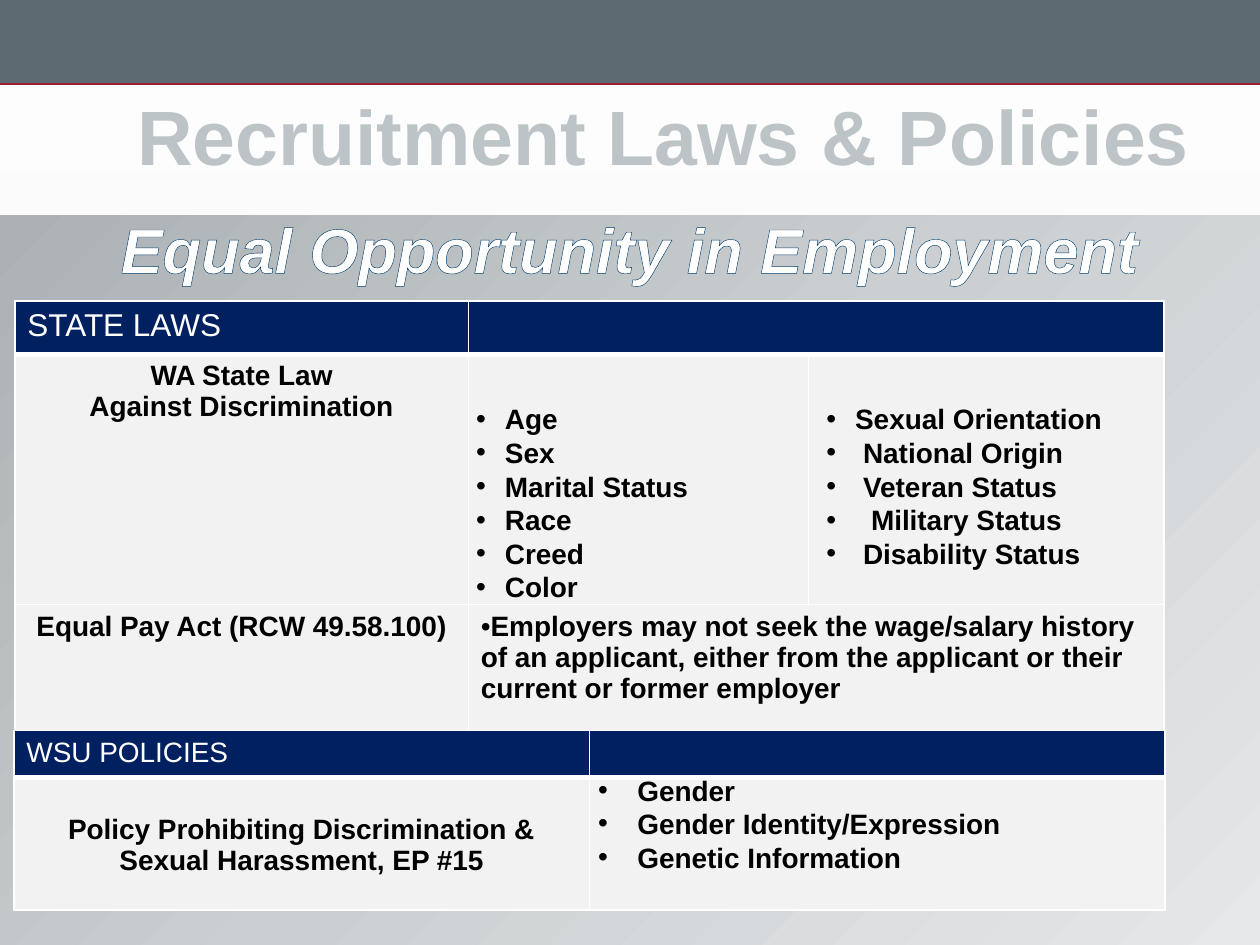
import pptx
import pptx.util
import pptx.dml.color
import pptx.enum.shapes
import pptx.enum.text
import pptx.oxml
import pptx.oxml.ns
from lxml import etree

Cm, Pt = pptx.util.Cm, pptx.util.Pt
qn = pptx.oxml.ns.qn
ALIGN = pptx.enum.text.PP_ALIGN
ANCHOR = pptx.enum.text.MSO_ANCHOR
NAVY, PALE, WHITE, BLACK = "002060", "F2F2F2", "FFFFFF", "000000"


def color(code):
    return pptx.dml.color.RGBColor.from_string(code)


def blend(fill, stops, angle):
    """Give a fill evenly spaced gradient stops; angle is anticlockwise."""
    fill.gradient()
    fill.gradient_angle = angle
    items = fill._fill._gradFill.find(qn("a:gsLst"))
    for old in list(items):
        items.remove(old)
    for i, code in enumerate(stops):
        stop = etree.SubElement(items, qn("a:gs"), pos=str(i * 100000 // (len(stops) - 1)))
        etree.SubElement(stop, qn("a:srgbClr"), val=code)


def stroke(tag, code, width):
    """Make a solid line element for text outlines and cell borders."""
    line = etree.Element(qn(tag), w=str(Pt(width)))
    solid = etree.SubElement(line, qn("a:solidFill"))
    etree.SubElement(solid, qn("a:srgbClr"), val=code)
    return line


def bullet(para, indent):
    """Hang a bullet at the left edge, with its text at the indent."""
    props = para._p.get_or_add_pPr()
    props.set("marL", str(Cm(indent)))
    props.set("indent", str(-Cm(indent)))
    etree.SubElement(props, qn("a:buFont"), typeface="Arial")
    etree.SubElement(props, qn("a:buChar"), char="•")


class Deck:
    face = "Arial"

    def __init__(self, wide, high):
        self.file = pptx.Presentation()
        self.file.slide_width, self.file.slide_height = Cm(wide), Cm(high)
        self.slide = self.file.slides.add_slide(self.file.slide_layouts[6])
        self.shapes = self.slide.shapes

    def style(self, para, size, code, bold=True, slant=False):
        font = para.font
        font.name, font.size = self.face, Pt(size)
        font.bold, font.italic = bold, slant
        font.color.rgb = color(code)

    def rect(self, *box):
        shape = self.shapes.add_shape(
            pptx.enum.shapes.MSO_SHAPE.RECTANGLE, *map(Cm, box))
        shape.shadow.inherit = False
        shape.line.fill.background()
        return shape

    def rule(self, x1, y1, x2, y2, code, width):
        line = self.shapes.add_connector(
            pptx.enum.shapes.MSO_CONNECTOR.STRAIGHT, *map(Cm, (x1, y1, x2, y2)))
        line.line.color.rgb, line.line.width = color(code), Pt(width)
        etree.SubElement(line._element.spPr, qn("a:effectLst"))

    def frame(self, box):
        frame = self.shapes.add_textbox(*map(Cm, box)).text_frame
        frame.word_wrap = True
        return frame

    def head(self, text, box, size, code, edge, width, slant=False):
        frame = self.frame(box)
        frame.vertical_anchor = ANCHOR.BOTTOM
        para = frame.paragraphs[0]
        para.alignment = ALIGN.CENTER
        self.style(para, size, code, slant=slant)
        run = para.add_run()
        run.text = text
        run._r.get_or_add_rPr().insert(0, stroke("a:ln", edge, width))

    def points(self, items, box, indent):
        """List bulleted items, each a text and its extra indent."""
        frame = self.frame(box)
        for i, (text, extra) in enumerate(items):
            para = frame.add_paragraph() if i else frame.paragraphs[0]
            bullet(para, indent + extra)
            para.text = text
            para.line_spacing = Pt(19.2)
            self.style(para, 16, BLACK)

    def table(self, left, top, cols, rows):
        grid = self.shapes.add_table(
            len(rows), len(cols), Cm(left), Cm(top), Cm(sum(cols)), Cm(sum(rows))).table
        grid.first_row = grid.horz_banding = False
        for col, width in zip(grid.columns, cols):
            col.width = Cm(width)
        for row, height in zip(grid.rows, rows):
            row.height = Cm(height)
        for r in range(len(rows)):
            for c in range(len(cols)):
                self.cell(grid.cell(r, c), r)
        return grid

    def cell(self, cell, row):
        cell.margin_top = cell.margin_bottom = 0
        props = cell._tc.get_or_add_tcPr()
        for side in "LRTB":
            thick = (row, side) in ((0, "B"), (1, "T"))
            props.append(stroke("a:ln" + side, WHITE, 3 if thick else 1))
        cell.fill.solid()
        cell.fill.fore_color.rgb = color(PALE if row else NAVY)

    def label(self, cell, lines, size=16, code=BLACK, bold=True,
              align=ALIGN.CENTER, top=0.13, dot=False):
        cell.margin_top, cell.margin_bottom = Cm(top), Cm(0.13)
        frame = cell.text_frame
        for i, text in enumerate(lines):
            para = frame.add_paragraph() if i else frame.paragraphs[0]
            if dot:
                bullet(para, 0)
            para.text = text
            para.alignment = align
            self.style(para, size, code, bold)


def main():
    deck = Deck(25.4, 19.05)

    # Background, top band and body panel
    blend(deck.slide.background.fill, ("EAEAEA", WHITE), 90)
    band = deck.rect(0, 0, 25.4, 1.7)
    band.fill.solid()
    band.fill.fore_color.rgb = color("5E6A71")
    deck.rule(0, 1.7, 25.4, 1.7, "981E32", 1)
    panel = deck.rect(0, 4.34, 25.4, 14.71)
    blend(panel.fill, ("ABB1B5", "CBCFD1", "E6E7E8"), 315)

    # Titles
    deck.head("Recruitment Laws & Policies", (1.37, 1.65, 24.03, 2.13),
              44, "BDC4C8", NAVY, 1.75)
    deck.head("Equal Opportunity in Employment", (0, 4.09, 25.4, 1.8),
              36, WHITE, "003C69", 0.75, slant=True)

    # State laws
    laws = deck.table(0.3, 6.07, (9.14, 6.86, 7.16), (1.07, 5.05, 2.67))
    for row in (0, 2):
        laws.cell(row, 1).merge(laws.cell(row, 2))
    deck.label(laws.cell(0, 0), ["STATE LAWS"], 18, WHITE, False, ALIGN.LEFT)
    deck.label(laws.cell(1, 0), ["WA State Law", "Against Discrimination"])
    deck.label(laws.cell(2, 0), ["Equal Pay Act (RCW 49.58.100)"])
    deck.label(laws.cell(2, 1), [
        "Employers may not seek the wage/salary history of an applicant, "
        "either from the applicant or their current or former employer"],
        align=ALIGN.LEFT, dot=True)

    # University policies
    rules = deck.table(0.28, 14.73, (11.6, 11.6), (0.94, 2.67))
    deck.label(rules.cell(0, 0), ["WSU POLICIES"], 16, WHITE, False, ALIGN.LEFT)
    deck.label(rules.cell(1, 0), [
        "Policy Prohibiting Discrimination & Sexual Harassment, EP #15"], top=0.75)

    # Protected classes
    traits = ("Age", "Sex", "Marital Status", "Race", "Creed", "Color")
    deck.points([(name, 0) for name in traits], (9.35, 7.98, 7.11, 4.37), 0.58)
    deck.points([("Sexual Orientation", 0), ("National Origin", 0.16),
                 ("Veteran Status", 0.16), ("Military Status", 0.32),
                 ("Disability Status", 0.16)], (16.41, 7.98, 8.13, 3.76), 0.58)
    genes = ("Gender", "Gender Identity/Expression", "Genetic Information")
    deck.points([(name, 0) for name in genes], (11.81, 15.46, 10.49, 2.55), 0.79)

    deck.file.save("out.pptx")


if __name__ == "__main__":
    main()
